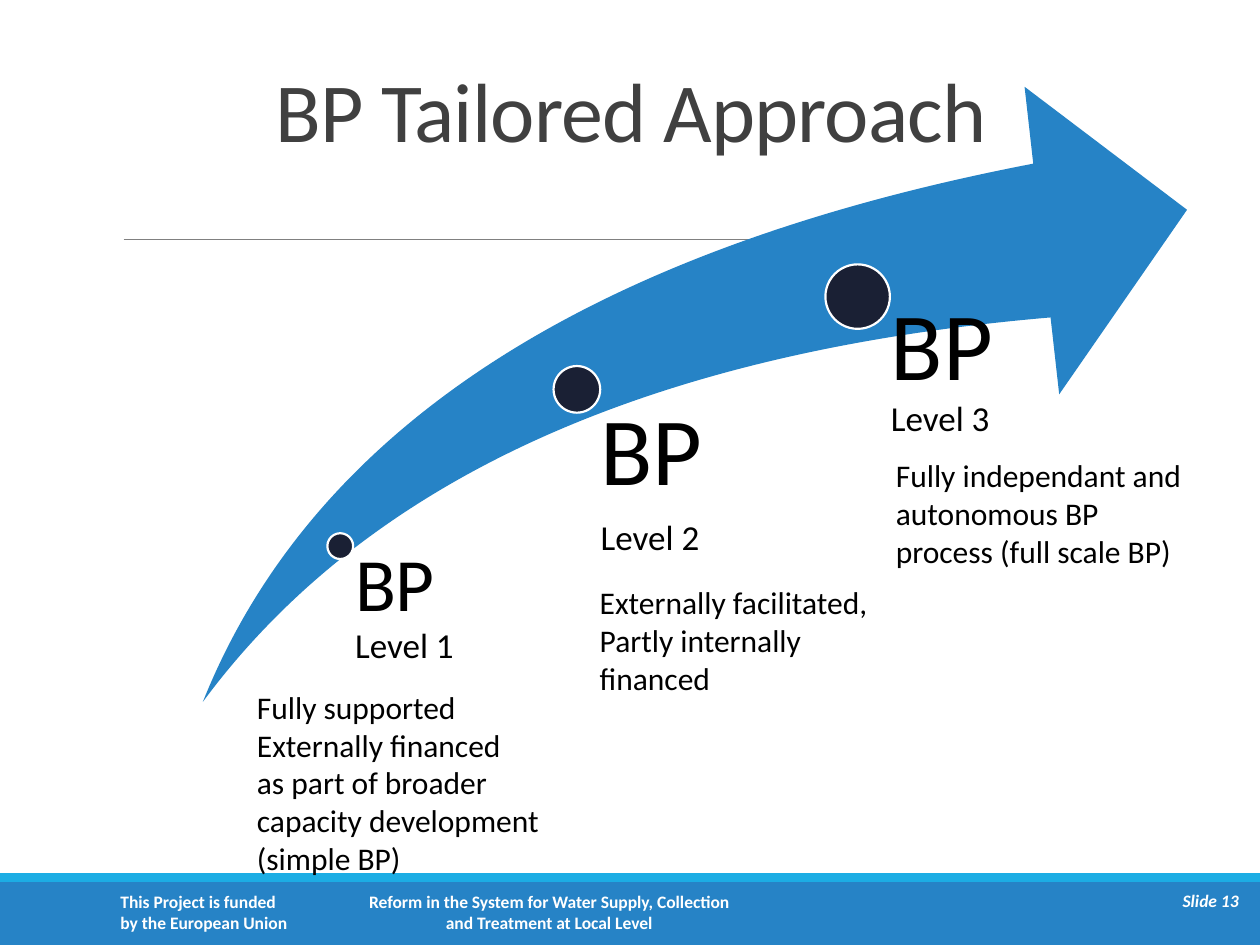
from lxml.etree import SubElement
from pptx import Presentation
from pptx.dml.color import RGBColor
from pptx.enum.shapes import MSO_CONNECTOR, MSO_SHAPE
from pptx.enum.text import MSO_ANCHOR, MSO_AUTO_SIZE, PP_ALIGN
from pptx.oxml.ns import qn
from pptx.util import Cm, Pt

BLUE = RGBColor(0x26, 0x83, 0xC6)
SKY = RGBColor(0x1C, 0xAD, 0xE4)
NAVY = RGBColor(0x1A, 0x20, 0x34)
GRAY = RGBColor(0x80, 0x80, 0x80)
DARK = RGBColor(0x40, 0x40, 0x40)
WHITE = RGBColor(0xFF, 0xFF, 0xFF)
BLACK = RGBColor(0, 0, 0)


class SlideBuilder:
    font = "Calibri"
    footer = {"size": Pt(10), "bold": True}

    def __init__(self, slide):
        self.s = slide

    def set_attrs(self, obj, values):
        for name, value in values.items():
            setattr(obj, name, value)

    def fill_text(self, tf, lines, color, para=None, frame=None):
        self.set_attrs(tf, {"word_wrap": True, **(frame or {})})
        for i, (text, fmt) in enumerate(lines):
            p = tf.paragraphs[0] if i == 0 else tf.add_paragraph()
            self.set_attrs(p, para or {})
            r = p.add_run()
            r.text = text
            self.set_attrs(r.font, {"name": self.font, **fmt})
            r.font.color.rgb = color

    def title(self, text, box):
        sp = self.s.shapes.title
        self.set_attrs(sp, dict(zip(("left", "top", "width", "height"), map(Cm, box))))
        self.fill_text(sp.text_frame, [(text, {"size": Pt(48)})], DARK,
                       {"alignment": PP_ALIGN.CENTER, "line_spacing": 0.85},
                       {"vertical_anchor": MSO_ANCHOR.MIDDLE, "auto_size": MSO_AUTO_SIZE.NONE})
        sp.text_frame.paragraphs[0].runs[0].font._element.set("spc", "-50")

    def text(self, box, lines, color=BLACK, para=None, **frame):
        sp = self.s.shapes.add_textbox(*map(Cm, box))
        self.fill_text(sp.text_frame, lines, color, para, frame)

    def shape(self, kind, box, fill, line=None, adjustments=()):
        sp = self.s.shapes.add_shape(kind, *map(Cm, box))
        sp.shadow.inherit = False
        sp.fill.solid()
        sp.fill.fore_color.rgb = fill
        for i, value in enumerate(adjustments):
            sp.adjustments[i] = value
        if line is None:
            sp.line.fill.background()
        else:
            sp.line.color.rgb = line
            sp.line.width = Pt(1.25)

    def rule(self, x1, x2, y):
        cxn = self.s.shapes.add_connector(MSO_CONNECTOR.STRAIGHT, Cm(x1), Cm(y), Cm(x2), Cm(y))
        cxn.line.color.rgb = GRAY
        cxn.line.width = Pt(0.5)
        SubElement(cxn._element.spPr, qn("a:effectLst"))

    def level(self, number, dot, box, size, inset, para):
        x, y, d = dot
        self.shape(MSO_SHAPE.OVAL, (x, y, d, d), NAVY, WHITE)
        lines = [("BP", {"size": Pt(size)}), (f"Level {number}", {"size": Pt(20)})]
        self.text(box, lines, para=para, margin_left=Cm(inset),
                  margin_top=0, margin_right=0, margin_bottom=0)

    def note(self, box, lines):
        self.text(box, [(line, {"size": Pt(18)}) for line in lines],
                  auto_size=MSO_AUTO_SIZE.SHAPE_TO_FIT_TEXT)


def main():
    prs = Presentation()
    prs.slide_width, prs.slide_height = Cm(25.4), Cm(19.05)
    b = SlideBuilder(prs.slides.add_slide(prs.slide_layouts[5]))

    b.shape(MSO_SHAPE.RECTANGLE, (0, 17.78, 25.4, 1.27), BLUE)
    b.shape(MSO_SHAPE.RECTANGLE, (0, 17.6, 25.4, 0.18), SKY)
    b.rule(2.49, 23.24, 4.83)
    b.title("BP Tailored Approach", (2.24, 0.33, 20.96, 4.04))

    b.text((2.18, 17.83, 3.91, 1.12),
           [(line, b.footer) for line in ("This Project is funded", "by the European Union")],
           WHITE, word_wrap=False, auto_size=MSO_AUTO_SIZE.SHAPE_TO_FIT_TEXT)
    b.text((7.11, 17.88, 7.92, 1.02),
           [("Reform in the System for Water Supply, Collection and Treatment at Local Level",
             b.footer)],
           WHITE, {"alignment": PP_ALIGN.CENTER}, vertical_anchor=MSO_ANCHOR.MIDDLE)
    b.text((23.04, 17.83, 2.18, 0.64), [("Slide 13", {**b.footer, "italic": True})],
           WHITE, {"alignment": PP_ALIGN.RIGHT}, vertical_anchor=MSO_ANCHOR.MIDDLE)

    b.shape(MSO_SHAPE.SWOOSH_ARROW, (4.09, 1.75, 19.84, 12.4), BLUE, adjustments=(0.25, 0.25))
    tight = {"line_spacing": 0.9}
    spaced = {"space_after": Pt(6)}
    levels = [
        ((6.6, 10.75, 0.52), (6.88, 11.02, 4.62, 3.58), 43, 0.28, tight),
        ((11.16, 7.38, 0.94), (11.63, 7.85, 4.75, 6.73), 55, 0.48, spaced),
        ((16.64, 5.33, 1.3), (17.27, 5.99, 4.75, 8.61), 55, 0.69, tight),
    ]
    for number, spec_values in enumerate(levels, 1):
        b.level(number, *spec_values)

    b.note((4.93, 13.74, 7.21, 4.11),
           ["Fully supported", "Externally financed",
            "as part of broader capacity development (simple BP)"])
    b.note((11.84, 11.63, 5.92, 2.57), ["Externally facilitated, Partly internally financed"])
    b.note((17.81, 9.07, 6.32, 2.57),
           ["Fully independant and autonomous BP process (full scale BP)"])

    prs.save("out.pptx")


if __name__ == "__main__":
    main()
